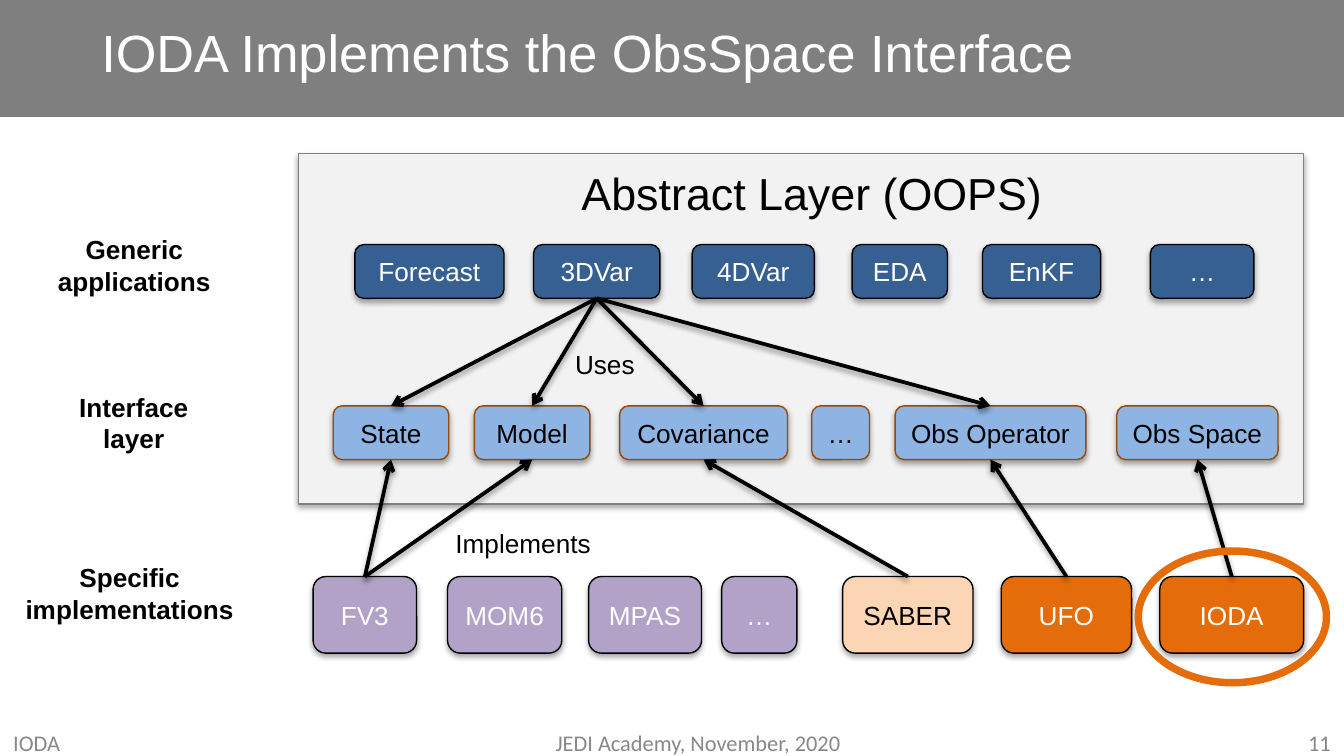
from collections import namedtuple

from lxml import etree
from pptx import Presentation
from pptx import util as u
from pptx.dml.color import RGBColor
from pptx.enum import shapes, text
from pptx.oxml import ns

CELL = u.Inches(0.1)
COLUMNS, ROWS = 100, 56.25
COLORS = {
    "header": "7F7F7F", "white": "FFFFFF", "black": "000000",
    "panel": "F2F2F2", "panel_line": "808080", "application": "376092",
    "interface": "8EB4E3", "interface_line": "984807", "model": "B3A2C7",
    "saber": "FCD5B5", "orange": "E46C0A", "footer": "888888",
}
Box = namedtuple("Box", "left top width height")
Align = text.PP_ALIGN


def color(name):
    return RGBColor.from_string(COLORS[name])


def cells(box):
    return [round(length * CELL) for length in box]


def inside(box, left, top, width, height):
    return Box(box.left + left, box.top + top, width, height)


def write(shape, words, size, ink, align=Align.CENTER, anchor=text.MSO_ANCHOR.MIDDLE,
          wrap=True, bold=False, font="Arial"):
    frame = shape.text_frame
    frame.text = words
    frame.word_wrap = wrap
    frame.vertical_anchor = anchor
    for paragraph in frame.paragraphs:
        paragraph.alignment = align
        paragraph.font.size = u.Pt(size)
        paragraph.font.name = font
        paragraph.font.bold = bold
        paragraph.font.color.rgb = color(ink)


def add_text(slide, box, words, size, ink, **style):
    write(slide.shapes.add_textbox(*cells(box)), words, size, ink, **style)


def add_shadow(shape, opacity):
    properties = shape._element.spPr
    effects = properties.find(ns.qn("a:effectLst"))
    if effects is None:
        effects = etree.SubElement(properties, ns.qn("a:effectLst"))
    shadow = etree.SubElement(effects, ns.qn("a:outerShdw"), blurRad=str(u.Pt(3.1)),
                              dist=str(u.Pt(1.8)), dir="5400000", rotWithShape="0")
    ink = etree.SubElement(shadow, ns.qn("a:srgbClr"), val=COLORS["black"])
    etree.SubElement(ink, ns.qn("a:alpha"), val=str(opacity * 1000))


def add_block(slide, kind, box, fill=None, line=None, width=0.75, shadow=True):
    shape = slide.shapes.add_shape(kind, *cells(box))
    shape.shadow.inherit = False
    if fill:
        shape.fill.solid()
        shape.fill.fore_color.rgb = color(fill)
    else:
        shape.fill.background()
    if line:
        shape.line.color.rgb = color(line)
        shape.line.width = u.Pt(width)
    else:
        shape.line.fill.background()
    if shadow:
        add_shadow(shape, 35)
    return shape


def add_arrow(slide, source, source_side, target, target_side):
    arrow = slide.shapes.add_connector(shapes.MSO_CONNECTOR.STRAIGHT, 0, 0, 0, 0)
    arrow.begin_connect(source, source_side)
    arrow.end_connect(target, target_side)
    arrow.line.color.rgb = color("black")
    arrow.line.width = u.Pt(2)
    etree.SubElement(arrow.line._get_or_add_ln(), ns.qn("a:tailEnd"), type="arrow")
    add_shadow(arrow, 38)


def add_row(slide, box, nodes, line):
    row = {}
    for words, left, width, fill, ink in nodes:
        place = inside(box, left, 0, width, box.height)
        row[words] = add_block(slide, shapes.MSO_SHAPE.ROUNDED_RECTANGLE, place, fill, line)
        write(row[words], words, 14, ink, wrap=False)
    return row


def add_header(slide, box):
    add_block(slide, shapes.MSO_SHAPE.RECTANGLE, box, "header", shadow=False)
    add_text(slide, inside(box, 2, 0, 83.4, 7.7),
             "IODA Implements the ObsSpace Interface", 28, "white")


def add_layer_labels(slide, box):
    for words, left, top, width, wrap in (("Generic\napplications", 4.3, 0, 13.4, False),
                                          ("Interface layer", 4.2, 11.7, 13.5, True),
                                          ("Specific implementations", 0, 24.4, 21.3, True)):
        add_text(slide, inside(box, left, top, width, 5.7), words, 14, "black",
                 bold=True, wrap=wrap, anchor=text.MSO_ANCHOR.TOP)


def add_abstract_layer(slide, box):
    add_block(slide, shapes.MSO_SHAPE.RECTANGLE, box, "panel", "panel_line")
    add_text(slide, inside(box, 18.5, 0.4, 39.4, 5), "Abstract Layer (OOPS)", 24, "black")
    applications = [("Forecast", 4.2, 11.1), ("3DVar", 17.5, 9.4), ("4DVar", 29.3, 9.1),
                    ("EDA", 41.2, 7.1), ("EnKF", 50.9, 8.8), ("…", 63.4, 7.7)]
    interfaces = [("State", 2.6, 8.6), ("Model", 13.1, 8.6), ("Covariance", 23.9, 12.5),
                  ("…", 38.2, 4.3), ("Obs Operator", 44.4, 14.2), ("Obs Space", 60.9, 12)]
    users = add_row(slide, inside(box, 0, 6.8, box.width, 4),
                    [(*node, "application", "white") for node in applications], "black")
    used = add_row(slide, inside(box, 0, 18.8, box.width, 4),
                   [(*node, "interface", "black") for node in interfaces], "interface_line")
    for name in ("State", "Model", "Covariance", "Obs Operator"):
        add_arrow(slide, users["3DVar"], 2, used[name], 0)
    add_text(slide, inside(box, 19.6, 14, 6.5, 3.4), "Uses", 14, "black", wrap=False,
             align=Align.LEFT)
    return used


def add_implementations(slide, box, interfaces):
    nodes = [("FV3", 1.1, 7.7, "model", "white"), ("MOM6", 11.1, 8.5, "model", "white"),
             ("MPAS", 21.6, 8.4, "model", "white"), ("…", 31.5, 5.6, "model", "white"),
             ("SABER", 40.5, 9.7, "saber", "black"), ("UFO", 52.3, 9.7, "orange", "white"),
             ("IODA", 64.1, 10.7, "orange", "white")]
    row = add_row(slide, box, nodes, "black")
    for source, target in (("FV3", "State"), ("FV3", "Model"), ("SABER", "Covariance"),
                           ("UFO", "Obs Operator"), ("IODA", "Obs Space")):
        add_arrow(slide, row[source], 0, interfaces[target], 2)
    add_text(slide, inside(box, 10.7, -4.2, 12.1, 3.4), "Implements", 14, "black", wrap=False,
             align=Align.LEFT)
    add_block(slide, shapes.MSO_SHAPE.OVAL, inside(box, 62.5, -1.9, 14, 9.8),
              line="orange", width=4, shadow=False)


def add_footer(slide, box):
    for words, left, width, align in (("IODA", 0, 23.3, Align.LEFT),
                                      ("JEDI Academy, November, 2020", 36.1, 31.7, Align.CENTER),
                                      ("11", 76.7, 23.3, Align.RIGHT)):
        add_text(slide, inside(box, left, 0, width, box.height), words, 12, "footer",
                 align=align, font="Calibri")


def main():
    presentation = Presentation()
    presentation.slide_width = round(COLUMNS * CELL)
    presentation.slide_height = round(ROWS * CELL)
    slide = presentation.slides.add_slide(presentation.slide_layouts[6])
    add_header(slide, Box(0, 0, COLUMNS, 8.7))
    add_layer_labels(slide, Box(-1, 16.9, 21.3, 30.1))
    interfaces = add_abstract_layer(slide, Box(22.2, 11.4, 74.8, 26.1))
    add_implementations(slide, Box(22.2, 42.9, 74.8, 5.7), interfaces)
    add_footer(slide, Box(0, 54.2, COLUMNS, 2.05))
    presentation.save("out.pptx")


if __name__ == "__main__":
    main()
